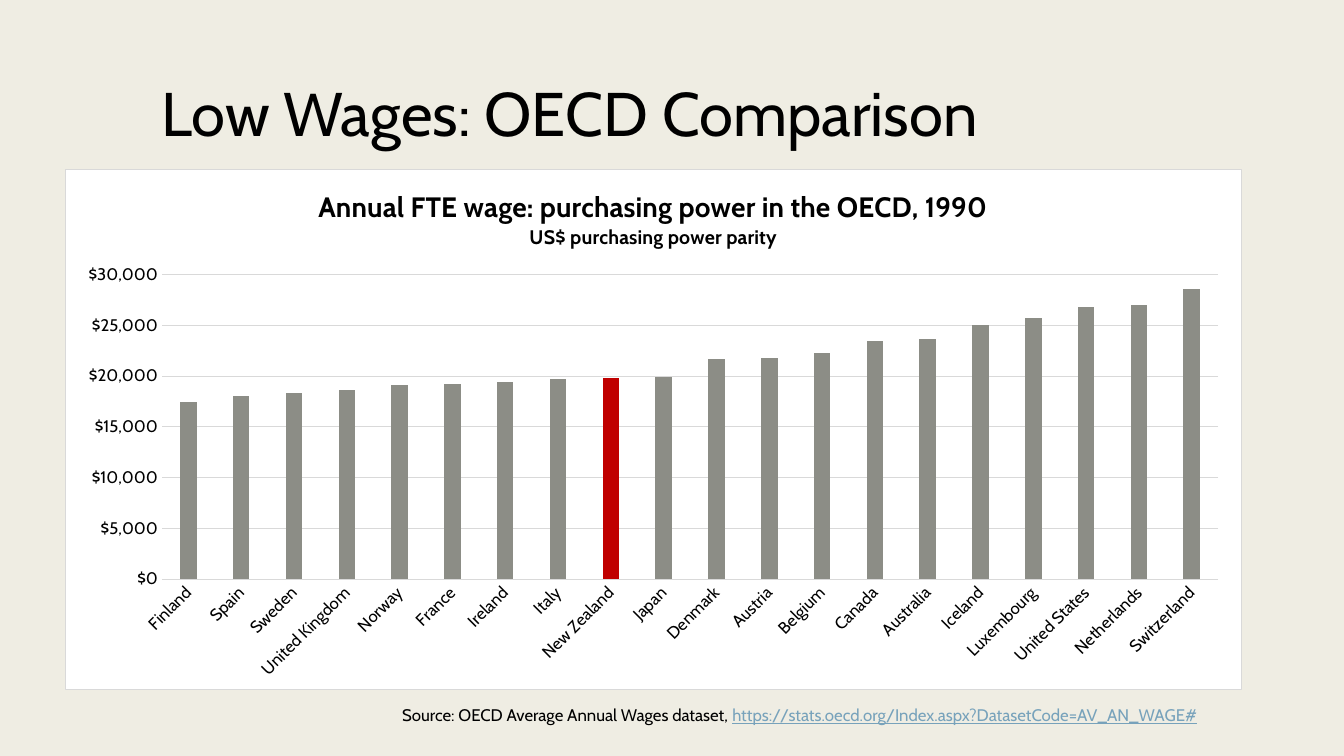
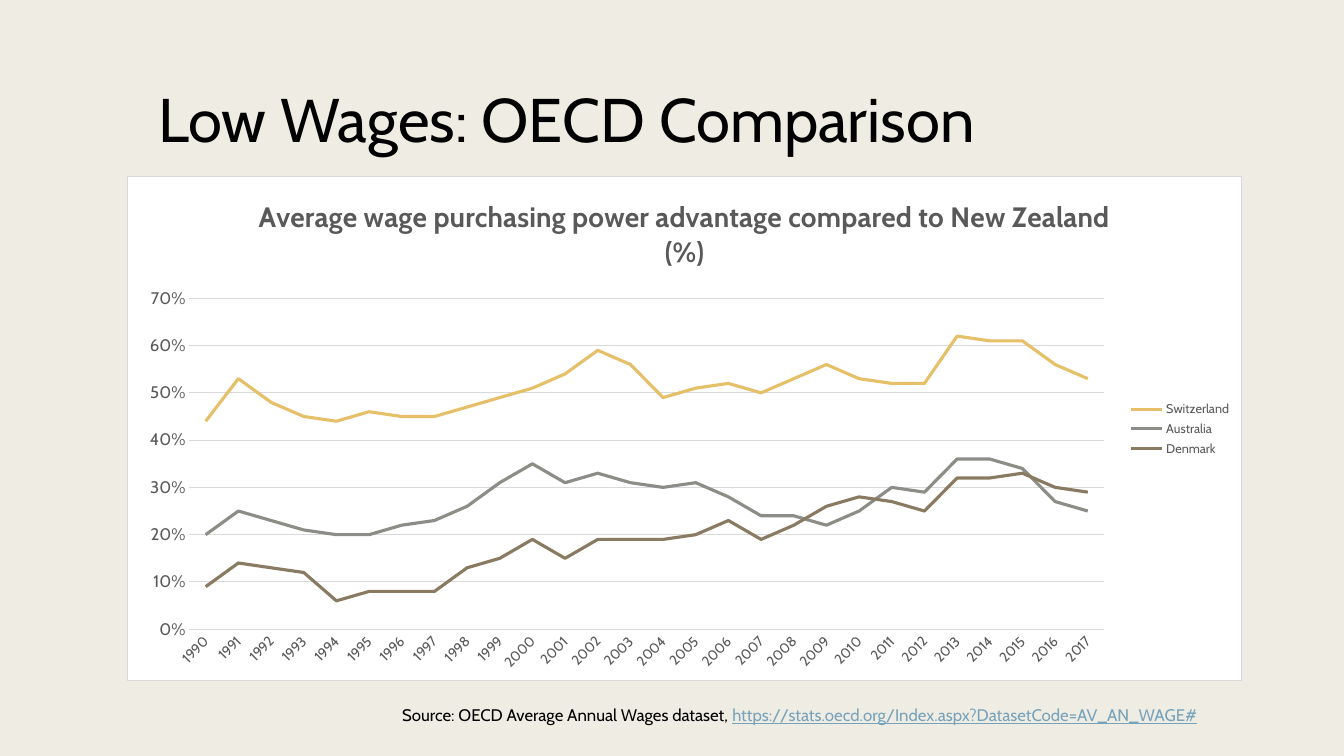
from dataclasses import dataclass

from lxml import etree
from pptx import Presentation
from pptx.chart.chart import Chart
from pptx.chart.data import CategoryChartData
from pptx.dml.color import RGBColor
from pptx.enum.chart import XL_CHART_TYPE, XL_LEGEND_POSITION, XL_TICK_MARK
from pptx.enum.text import MSO_ANCHOR
from pptx.oxml import parse_xml
from pptx.oxml.ns import nsdecls, qn
from pptx.presentation import Presentation as Deck
from pptx.slide import Slide
from pptx.util import Inches, Pt

COLUMNS = XL_CHART_TYPE.COLUMN_CLUSTERED
LINES = XL_CHART_TYPE.LINE
LEGEND_RIGHT = XL_LEGEND_POSITION.RIGHT
NO_TICK = XL_TICK_MARK.NONE
MIDDLE = MSO_ANCHOR.MIDDLE

FONT = "Cabin"
SAND, WHITE, BLACK = "EFEDE3", "FFFFFF", "000000"
DARK_GREY, RULE_GREY = "595959", "D9D9D9"
GREY, RED, GOLD, BROWN, LINK_BLUE = "8C8D86", "C00000", "E6C069", "897B61", "77A2BB"

TITLE = "Low Wages: OECD Comparison"
SOURCE = "Source: OECD Average Annual Wages dataset, "
SOURCE_ADDRESS = "https://stats.oecd.org/Index.aspx?DatasetCode=AV_AN_WAGE#"


@dataclass(frozen=True)
class Area:
    left: float
    top: float
    width: float
    height: float

    def lengths(self) -> tuple:
        return tuple(Inches(n) for n in (self.left, self.top, self.width, self.height))


@dataclass(frozen=True)
class Series:
    name: str
    color: str
    values: tuple


@dataclass(frozen=True)
class WageChart:
    area: Area
    kind: int
    title_lines: tuple
    text_color: str
    category_size: int
    number_format: str
    maximum: float
    step: float
    categories: tuple
    series: tuple


TITLE_AREAS = (Area(1.5, 0.75, 10.5, 0.81), Area(1.47, 0.81, 10.5, 0.81))
SOURCE_AREA = Area(3.89, 6.94, 8.42, 0.3)

WAGES_1990 = WageChart(
    area=Area(0.64, 1.68, 11.68, 5.17),
    kind=COLUMNS,
    title_lines=(
        ("Annual FTE wage: purchasing power in the OECD, 1990", 20),
        ("US$ purchasing power parity", 14),
    ),
    text_color=BLACK,
    category_size=12,
    number_format='"$"#,##0',
    maximum=30000,
    step=5000,
    categories=(
        "Finland", "Spain", "Sweden", "United Kingdom", "Norway", "France", "Ireland",
        "Italy", "New Zealand", "Japan", "Denmark", "Austria", "Belgium", "Canada",
        "Australia", "Iceland", "Luxembourg", "United States", "Netherlands", "Switzerland",
    ),
    series=(
        Series("Series 1", GREY, (
            17400, 18000, 18300, 18600, 19100, 19200, 19400, 19700, 19800, 19900,
            21700, 21800, 22300, 23500, 23700, 25000, 25700, 26800, 27000, 28600,
        )),
    ),
)

WAGE_ADVANTAGE = WageChart(
    area=Area(1.26, 1.75, 11.06, 5.01),
    kind=LINES,
    title_lines=(("Average wage purchasing power advantage compared to New Zealand (%)", 20),),
    text_color=DARK_GREY,
    category_size=10,
    number_format="0%",
    maximum=0.7,
    step=0.1,
    categories=tuple(str(year) for year in range(1990, 2018)),
    series=(
        Series("Switzerland", GOLD, (
            0.44, 0.53, 0.48, 0.45, 0.44, 0.46, 0.45, 0.45, 0.47, 0.49, 0.51, 0.54, 0.59, 0.56,
            0.49, 0.51, 0.52, 0.5, 0.53, 0.56, 0.53, 0.52, 0.52, 0.62, 0.61, 0.61, 0.56, 0.53,
        )),
        Series("Australia", GREY, (
            0.2, 0.25, 0.23, 0.21, 0.2, 0.2, 0.22, 0.23, 0.26, 0.31, 0.35, 0.31, 0.33, 0.31,
            0.3, 0.31, 0.28, 0.24, 0.24, 0.22, 0.25, 0.3, 0.29, 0.36, 0.36, 0.34, 0.27, 0.25,
        )),
        Series("Denmark", BROWN, (
            0.09, 0.14, 0.13, 0.12, 0.06, 0.08, 0.08, 0.08, 0.13, 0.15, 0.19, 0.15, 0.19, 0.19,
            0.19, 0.2, 0.23, 0.19, 0.22, 0.26, 0.28, 0.27, 0.25, 0.32, 0.32, 0.33, 0.3, 0.29,
        )),
    ),
)


def rgb(color: str) -> RGBColor:
    return RGBColor.from_string(color)


def style_font(font, size: float, color: str, bold: bool = False) -> None:
    font.name = FONT
    font.size = Pt(size)
    font.bold = bold
    font.color.rgb = rgb(color)


def style_line(line, color: str, width: float = 0.75) -> None:
    line.color.rgb = rgb(color)
    line.width = Pt(width)


def add_title(page: Slide, area: Area) -> None:
    frame = page.shapes.add_textbox(*area.lengths()).text_frame
    frame.word_wrap = True
    frame.vertical_anchor = MIDDLE
    frame.text = TITLE
    para = frame.paragraphs[0]
    para.line_spacing = 0.89
    style_font(para.runs[0].font, 44, BLACK)


def add_source(page: Slide) -> None:
    frame = page.shapes.add_textbox(*SOURCE_AREA.lengths()).text_frame
    frame.word_wrap = False
    frame.text = SOURCE
    para = frame.paragraphs[0]
    style_font(para.runs[0].font, 12, BLACK)
    address = para.add_run()
    address.text = SOURCE_ADDRESS
    style_font(address.font, 12, LINK_BLUE)
    address.font.underline = True


def frame_chart(chart: Chart) -> None:
    root = chart.element
    body = root.find(qn("c:chart"))
    if root.find(qn("c:roundedCorners")) is None:
        body.addprevious(parse_xml(f'<c:roundedCorners {nsdecls("c")} val="0"/>'))
    panel = parse_xml(f'<c:spPr {nsdecls("c", "a")}/>')
    fill = etree.SubElement(panel, qn("a:solidFill"))
    etree.SubElement(fill, qn("a:srgbClr"), val=WHITE)
    border = etree.SubElement(panel, qn("a:ln"), w=str(Pt(0.75)))
    stroke = etree.SubElement(border, qn("a:solidFill"))
    etree.SubElement(stroke, qn("a:srgbClr"), val=RULE_GREY)
    body.addnext(panel)


def style_axes(chart: Chart, wages: WageChart) -> None:
    categories, values = chart.category_axis, chart.value_axis
    for axis, size in ((categories, wages.category_size), (values, 12)):
        axis.major_tick_mark = NO_TICK
        axis.minor_tick_mark = NO_TICK
        style_font(axis.tick_labels.font, size, wages.text_color)
    style_line(categories.format.line, RULE_GREY)
    categories.has_major_gridlines = False
    for label_body in chart.element.xpath(".//c:catAx/c:txPr/a:bodyPr"):
        label_body.set("rot", "-2700000")
        label_body.set("vert", "horz")
    values.minimum_scale = 0
    values.maximum_scale = wages.maximum
    values.major_unit = wages.step
    values.format.line.fill.background()
    style_line(values.major_gridlines.format.line, RULE_GREY)
    values.tick_labels.number_format = wages.number_format
    values.tick_labels.number_format_is_linked = False


def add_chart_title(chart: Chart, wages: WageChart) -> None:
    chart.has_title = True
    chart.chart_title.include_in_layout = False
    frame = chart.chart_title.text_frame
    frame.text = "\n".join(text for text, _ in wages.title_lines)
    for para, (_, size) in zip(frame.paragraphs, wages.title_lines):
        style_font(para.runs[0].font, size, wages.text_color, bold=True)


def add_wage_chart(page: Slide, wages: WageChart) -> Chart:
    data = CategoryChartData(number_format=wages.number_format)
    data.categories = wages.categories
    for series in wages.series:
        data.add_series(series.name, series.values)
    chart = page.shapes.add_chart(wages.kind, *wages.area.lengths(), data).chart
    style_font(chart.font, wages.category_size, BLACK)
    frame_chart(chart)
    add_chart_title(chart, wages)
    style_axes(chart, wages)
    chart.has_legend = False
    chart.plots[0].vary_by_categories = False
    return chart


def style_columns(chart: Chart, wages: WageChart) -> None:
    plot = chart.plots[0]
    plot.gap_width = 219
    plot.overlap = -27
    columns = plot.series[0]
    highlight = columns.points[wages.categories.index("New Zealand")]
    for part, color in ((columns, wages.series[0].color), (highlight, RED)):
        part.format.fill.solid()
        part.format.fill.fore_color.rgb = rgb(color)


def style_lines(chart: Chart, wages: WageChart) -> None:
    for drawn, series in zip(chart.plots[0].series, wages.series):
        drawn.smooth = False
        style_line(drawn.format.line, series.color, 2.25)
    chart.has_legend = True
    chart.legend.position = LEGEND_RIGHT
    chart.legend.include_in_layout = False
    style_font(chart.legend.font, 9, DARK_GREY)


def add_page(deck: Deck, title_area: Area) -> Slide:
    page = deck.slides.add_slide(deck.slide_layouts[6])
    add_title(page, title_area)
    add_source(page)
    return page


def main() -> None:
    deck = Presentation()
    deck.slide_width, deck.slide_height = Inches(13.33), Inches(7.5)
    backdrop = deck.slide_master.background.fill
    backdrop.solid()
    backdrop.fore_color.rgb = rgb(SAND)
    charts = ((WAGES_1990, style_columns), (WAGE_ADVANTAGE, style_lines))
    for title_area, (wages, style_series) in zip(TITLE_AREAS, charts):
        page = add_page(deck, title_area)
        style_series(add_wage_chart(page, wages), wages)
    deck.save("out.pptx")


if __name__ == "__main__":
    main()
